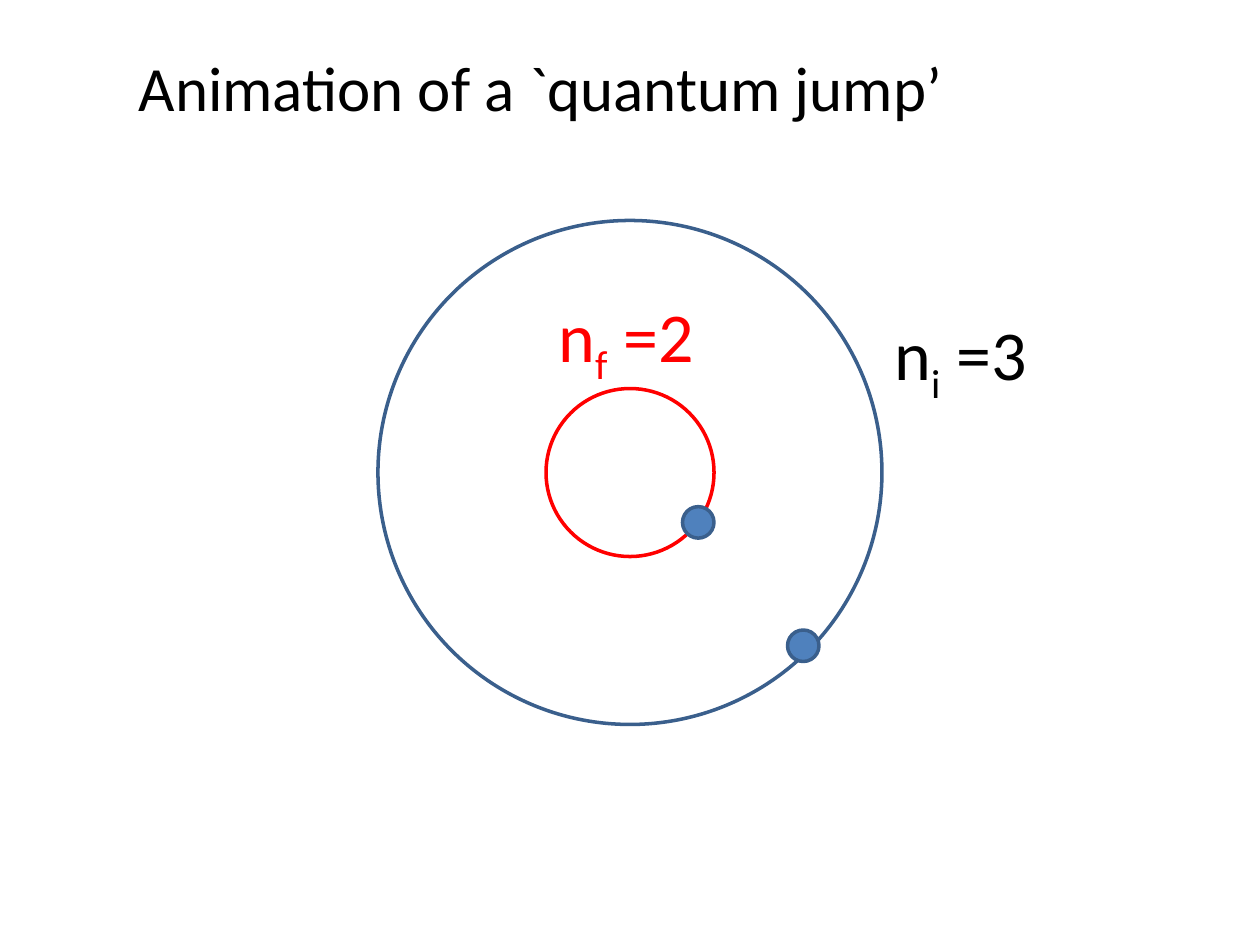
from pptx import Presentation
from pptx.dml.color import RGBColor
from pptx.enum.shapes import MSO_SHAPE
from pptx.enum.text import MSO_ANCHOR, MSO_AUTO_SIZE, PP_ALIGN
from pptx.util import Pt

OVAL = MSO_SHAPE.OVAL
TOP = MSO_ANCHOR.TOP
GROW = MSO_AUTO_SIZE.SHAPE_TO_FIT_TEXT
LEFT = PP_ALIGN.LEFT
BLACK = RGBColor(0, 0, 0)
RED = RGBColor(0xFF, 0, 0)
BLUE = RGBColor(0x4F, 0x81, 0xBD)
NAVY = RGBColor(0x3A, 0x5F, 0x8C)


def write(frame, *parts, size, color, sub=None):
    """Fill a text frame with runs, lowering the run at index sub."""
    frame.word_wrap = True
    frame.auto_size = GROW
    frame.vertical_anchor = TOP
    para = frame.paragraphs[0]
    para.alignment = LEFT
    for idx, part in enumerate(parts):
        run = para.add_run()
        run.text = part
        font = run.font
        font.name, font.size, font.color.rgb = "Calibri", Pt(size), color
        if idx == sub:
            run._r.get_or_add_rPr().set("baseline", "-25000")


def disc(slide, x, y, size, line, fill=None):
    """Draw a circle from its top left corner."""
    shape = slide.shapes.add_shape(OVAL, Pt(x), Pt(y), Pt(size), Pt(size))
    shape.shadow.inherit = False
    if fill is None:
        shape.fill.background()
    else:
        shape.fill.solid()
        shape.fill.fore_color.rgb = fill
    shape.line.color.rgb = line
    shape.line.width = Pt(2)


def label(slide, x, y, width, state, level, color):
    """Name an orbit by its state letter and its level."""
    box = slide.shapes.add_textbox(Pt(x), Pt(y), Pt(width), Pt(55.4))
    write(box.text_frame, "n", state, f" ={level}", size=40, color=color, sub=1)


def head(slide, x, y, width, height):
    """Place and format the title."""
    title = slide.shapes.title
    title.left, title.top = Pt(x), Pt(y)
    title.width, title.height = Pt(width), Pt(height)
    write(title.text_frame, "Animation of a `quantum jump’", size=36, color=BLACK)


def atom(slide, x, y, size):
    """Draw both orbits, their labels and the electrons in a square box."""
    inner = size / 3
    disc(slide, x, y, size, NAVY)
    disc(slide, x + inner, y + inner, inner, RED)
    label(slide, x + size, y + 48, 96, "i", 3, BLACK)
    label(slide, x + inner, y + 37.5, 126, "f", 2, RED)
    for dx, dy in ((234, 234), (174, 163.5)):
        disc(slide, x + dx, y + dy, 18, NAVY, BLUE)


def main():
    """Build and save the slide."""
    deck = Presentation()
    deck.slide_width, deck.slide_height = Pt(720), Pt(540)
    slide = deck.slides.add_slide(deck.slide_layouts[5])
    head(slide, 72, 24, 576, 51)
    atom(slide, 216, 126, 288)
    deck.save("out.pptx")


if __name__ == "__main__":
    main()
